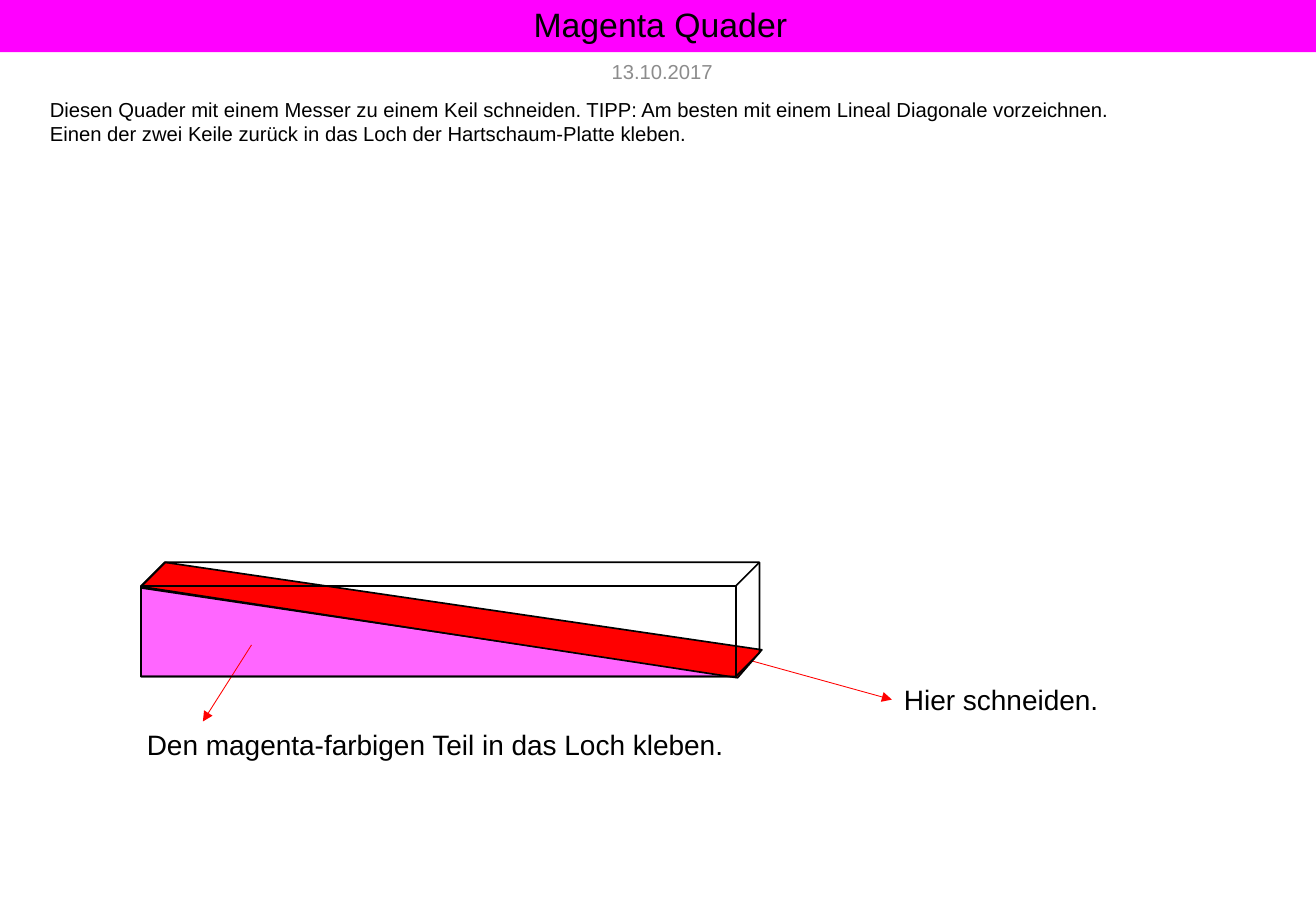
"""Builds the slide that shows how to cut the magenta block into a wedge."""
from dataclasses import dataclass

from lxml import etree
from pptx import Presentation
from pptx.dml.color import RGBColor
from pptx.enum import shapes, text
from pptx.oxml import ns
from pptx.util import Inches, Pt


@dataclass(frozen=True)
class Theme:
    font: str = "Arial"
    black: str = "000000"
    grey: str = "8C8C8C"
    red: str = "FF0000"
    banner: str = "FF00FF"
    wedge: str = "FF66FF"
    title: float = 20
    body: float = 12
    label: float = 16.6
    outline: float = 1
    arrow: float = 0.5


THEME = Theme()
SIZE = (10.83, 7.5)
TITLE = ("Magenta Quader", (0, 0, 10.87, 0.43))
DATE = ("13.10.2017", (4.8, 0.43, 1.3, 0.31))
STEPS = (
    [
        "Diesen Quader mit einem Messer zu einem Keil schneiden. "
        "TIPP: Am besten mit einem Lineal Diagonale vorzeichnen.",
        "Einen der zwei Keile zurück in das Loch der Hartschaum-Platte kleben.",
    ],
    (0.31, 0.75, 10.24, 0.79),
)
LABELS = [
    ("Hier schneiden.", (7.34, 5.57, 2.25, 0.38)),
    ("Den magenta-farbigen Teil in das Loch kleben.", (1.11, 5.94, 5.01, 0.38)),
]
ARROWS = [((6.11, 5.42), (7.34, 5.76)), ((2.07, 5.31), (1.67, 5.94))]
WEDGE = (1.16, 4.84, 4.91, 0.73)
CUT = [(1.36, 4.63), (6.27, 5.35), (6.07, 5.58), (1.16, 4.83)]
BLOCK = (1.16, 4.63, 5.09, 0.94)
BLOCK_DEPTH = 0.208


def inches(values):
    return [Inches(value) for value in values]


def place(shape, area):
    shape.left, shape.top, shape.width, shape.height = inches(area)


def paint(shape, fill=None, line=None):
    if fill:
        shape.fill.solid()
        shape.fill.fore_color.rgb = RGBColor.from_string(fill)
    else:
        shape.fill.background()
    if line:
        shape.line.color.rgb = RGBColor.from_string(line)
        shape.line.width = Pt(THEME.outline)
    shape.shadow.inherit = False


def write(box, lines, size, color=THEME.black, align=text.PP_ALIGN.LEFT,
          anchor=text.MSO_ANCHOR.TOP, spacing=1.0):
    frame = box.text_frame
    frame.word_wrap = True
    frame.auto_size = text.MSO_AUTO_SIZE.NONE
    frame.vertical_anchor = anchor
    for number, line in enumerate(lines):
        para = frame.add_paragraph() if number else frame.paragraphs[0]
        para.alignment = align
        para.line_spacing = spacing
        para.space_before = para.space_after = Pt(0)
        span = para.add_run()
        span.text = line
        span.font.name = THEME.font
        span.font.size = Pt(size)
        span.font.color.rgb = RGBColor.from_string(color)


def remove_bullets(box):
    for para in box.text_frame.paragraphs:
        properties = para._p.get_or_add_pPr()
        properties.set("marL", "0")
        properties.set("indent", "0")
        etree.SubElement(properties, ns.qn("a:buNone"))


def add_arrow(page, start, end):
    arrow = page.shapes.add_connector(
        shapes.MSO_CONNECTOR.STRAIGHT, *inches(start + end))
    arrow.line.color.rgb = RGBColor.from_string(THEME.red)
    arrow.line.width = Pt(THEME.arrow)
    etree.SubElement(arrow.line._get_or_add_ln(), ns.qn("a:tailEnd"), type="triangle")
    etree.SubElement(arrow._element.spPr, ns.qn("a:effectLst"))


def add_texts(page):
    centred = {"align": text.PP_ALIGN.CENTER, "anchor": text.MSO_ANCHOR.MIDDLE}
    title, body = page.placeholders
    heading, area = TITLE
    place(title, area)
    title.fill.solid()
    title.fill.fore_color.rgb = RGBColor.from_string(THEME.banner)
    write(title, [heading], THEME.title, spacing=0.9, **centred)

    lines, area = STEPS
    place(body, area)
    write(body, lines, THEME.body)
    remove_bullets(body)

    date, area = DATE
    box = page.shapes.add_textbox(*inches(area))
    write(box, [date], THEME.body, THEME.grey, **centred)
    for label, area in LABELS:
        write(page.shapes.add_textbox(*inches(area)), [label], THEME.label)


def add_drawing(page):
    wedge = page.shapes.add_shape(shapes.MSO_SHAPE.RIGHT_TRIANGLE, *inches(WEDGE))
    paint(wedge, THEME.wedge, THEME.black)
    for start, end in ARROWS:
        add_arrow(page, start, end)

    corners = [inches(corner) for corner in CUT]
    builder = page.shapes.build_freeform(*corners[0])
    builder.add_line_segments(corners[1:], close=True)
    paint(builder.convert_to_shape(), THEME.red, THEME.black)

    block = page.shapes.add_shape(shapes.MSO_SHAPE.CUBE, *inches(BLOCK))
    block.adjustments[0] = BLOCK_DEPTH
    paint(block, line=THEME.black)


def main():
    deck = Presentation()
    deck.slide_width, deck.slide_height = inches(SIZE)
    page = deck.slides.add_slide(deck.slide_layouts[1])
    add_texts(page)
    add_drawing(page)
    deck.save("out.pptx")


if __name__ == "__main__":
    main()
